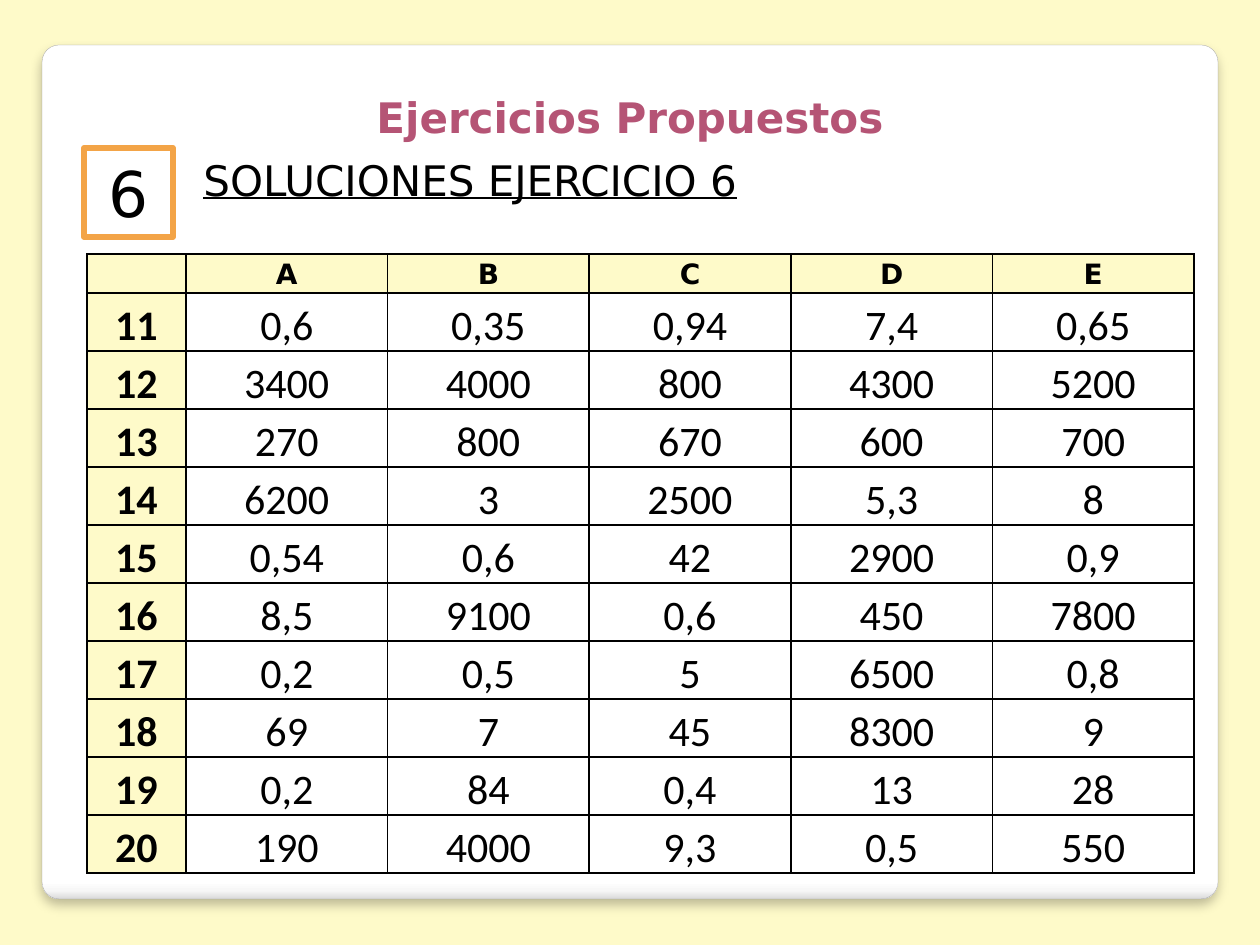
"""Build the slide with the solutions to exercise 6."""
from lxml import etree
from pptx import Presentation
from pptx import util as u
from pptx.dml.color import RGBColor
from pptx.enum import shapes, text
from pptx.oxml.ns import qn

TITLE = "Ejercicios Propuestos"
NUMBER = "6"
SUBTITLE = "SOLUCIONES EJERCICIO 6"
HEADERS = ["", "A", "B", "C", "D", "E"]
SOLUTIONS = [
    ["11", "0,6", "0,35", "0,94", "7,4", "0,65"],
    ["12", "3400", "4000", "800", "4300", "5200"],
    ["13", "270", "800", "670", "600", "700"],
    ["14", "6200", "3", "2500", "5,3", "8"],
    ["15", "0,54", "0,6", "42", "2900", "0,9"],
    ["16", "8,5", "9100", "0,6", "450", "7800"],
    ["17", "0,2", "0,5", "5", "6500", "0,8"],
    ["18", "69", "7", "45", "8300", "9"],
    ["19", "0,2", "84", "0,4", "13", "28"],
    ["20", "190", "4000", "9,3", "0,5", "550"],
]

CREAM = RGBColor(0xFE, 0xFA, 0xC9)
WHITE = RGBColor(0xFF, 0xFF, 0xFF)
BLACK = RGBColor(0x00, 0x00, 0x00)
GREY = RGBColor(0xA4, 0xA4, 0xA4)
ROSE = RGBColor(0xB5, 0x54, 0x75)
ORANGE = RGBColor(0xF3, 0xA4, 0x47)
PANEL_STOPS = [(0, WHITE), (98, WHITE), (99, RGBColor(0xF7, 0xF7, 0xF7)),
               (100, RGBColor(0xDA, 0xDA, 0xDA))]

DISPLAY_FONT, TABLE_FONT = "DejaVu Sans", "Calibri"
TABLE_LEFT, TABLE_TOP, TABLE_WIDTH = 87, 254, 1107
LABEL_WIDTH, HEADER_HEIGHT, ROW_HEIGHT = 99, 39, 58


def px(value):
    return u.Emu(round(value * 914400 / 126))


def box(*lengths):
    return [px(length) for length in lengths]


def write(frame, content, size, font=DISPLAY_FONT, color=BLACK, bold=False,
          underline=False, align=text.PP_ALIGN.CENTER, spacing=None):
    paragraph = frame.paragraphs[0]
    paragraph.alignment = align
    paragraph.line_spacing = spacing
    run = paragraph.add_run()
    run.text = content
    run.font.size = u.Pt(size)
    run.font.name = font
    run.font.color.rgb = color
    run.font.bold = bold
    run.font.underline = underline


def add_color(parent, color, alpha=None):
    element = etree.SubElement(parent, qn("a:srgbClr"), val=str(color))
    if alpha is not None:
        etree.SubElement(element, qn("a:alpha"), val=str(alpha * 1000))


def add_panel(slide):
    panel = slide.shapes.add_shape(shapes.MSO_SHAPE.ROUNDED_RECTANGLE, *box(42, 45, 1176, 854))
    panel.adjustments[0] = 0.02
    panel.line.color.rgb = GREY
    panel.line.width = u.Pt(0.16)
    panel.fill.gradient()
    panel.fill.gradient_angle = 270
    properties = panel.element.spPr
    stops = properties.find(".//" + qn("a:gsLst"))
    stops.clear()
    for position, color in PANEL_STOPS:
        add_color(etree.SubElement(stops, qn("a:gs"), pos=str(position * 1000)), color)
    panel.shadow.inherit = False
    shadow = etree.SubElement(
        properties.find(qn("a:effectLst")), qn("a:outerShdw"), blurRad=str(u.Pt(6)),
        dist=str(u.Pt(4)), dir="5400000", algn="t", rotWithShape="0")
    add_color(shadow, BLACK, alpha=25)
    slide.shapes.element.insert(2, panel.element)


def add_number(slide):
    square = slide.shapes.add_shape(shapes.MSO_SHAPE.RECTANGLE, *box(84, 148, 89, 89))
    square.shadow.inherit = False
    square.fill.solid()
    square.fill.fore_color.rgb = WHITE
    square.line.color.rgb = ORANGE
    square.line.width = u.Pt(3.35)
    write(square.text_frame, NUMBER, 36)


def border(cell):
    properties = cell._tc.get_or_add_tcPr()
    for side in ("lnL", "lnR", "lnT", "lnB"):
        line = etree.SubElement(properties, qn("a:" + side), w=str(u.Pt(1)))
        add_color(etree.SubElement(line, qn("a:solidFill")), BLACK)


def add_solutions(slide):
    rows = [HEADERS] + SOLUTIONS
    height = HEADER_HEIGHT + ROW_HEIGHT * len(SOLUTIONS)
    table = slide.shapes.add_table(
        len(rows), len(HEADERS), *box(TABLE_LEFT, TABLE_TOP, TABLE_WIDTH, height)).table
    table.first_row = table.horz_banding = False
    value_width = (TABLE_WIDTH - LABEL_WIDTH) / (len(HEADERS) - 1)
    for index, column in enumerate(table.columns):
        column.width = px(value_width if index else LABEL_WIDTH)
    for row_index, values in enumerate(rows):
        table.rows[row_index].height = px(ROW_HEIGHT if row_index else HEADER_HEIGHT)
        for column_index, value in enumerate(values):
            cell = table.cell(row_index, column_index)
            border(cell)
            cell.margin_left = cell.margin_right = px(9)
            cell.margin_top = cell.margin_bottom = 0
            heading = row_index == 0 or column_index == 0
            if heading:
                cell.fill.solid()
                cell.fill.fore_color.rgb = CREAM
            else:
                cell.fill.background()
            if value:
                size, font = (24, TABLE_FONT) if row_index else (16, DISPLAY_FONT)
                write(cell.text_frame, value, size, font=font, bold=heading, spacing=1.15)


def main():
    presentation = Presentation()
    presentation.slide_width, presentation.slide_height = box(1260, 945)
    slide = presentation.slides.add_slide(presentation.slide_layouts[5])
    slide.background.fill.solid()
    slide.background.fill.fore_color.rgb = CREAM
    add_panel(slide)

    title = slide.shapes.title
    title.left, title.top, title.width, title.height = box(49, 85, 1162, 63)
    write(title.text_frame, TITLE, 24, color=ROSE, bold=True)

    add_number(slide)
    subtitle = slide.shapes.add_textbox(*box(191, 148, 1002, 63))
    subtitle.text_frame.word_wrap = True
    write(subtitle.text_frame, SUBTITLE, 24, underline=True, align=text.PP_ALIGN.LEFT)
    add_solutions(slide)
    presentation.save("out.pptx")


if __name__ == "__main__":
    main()
